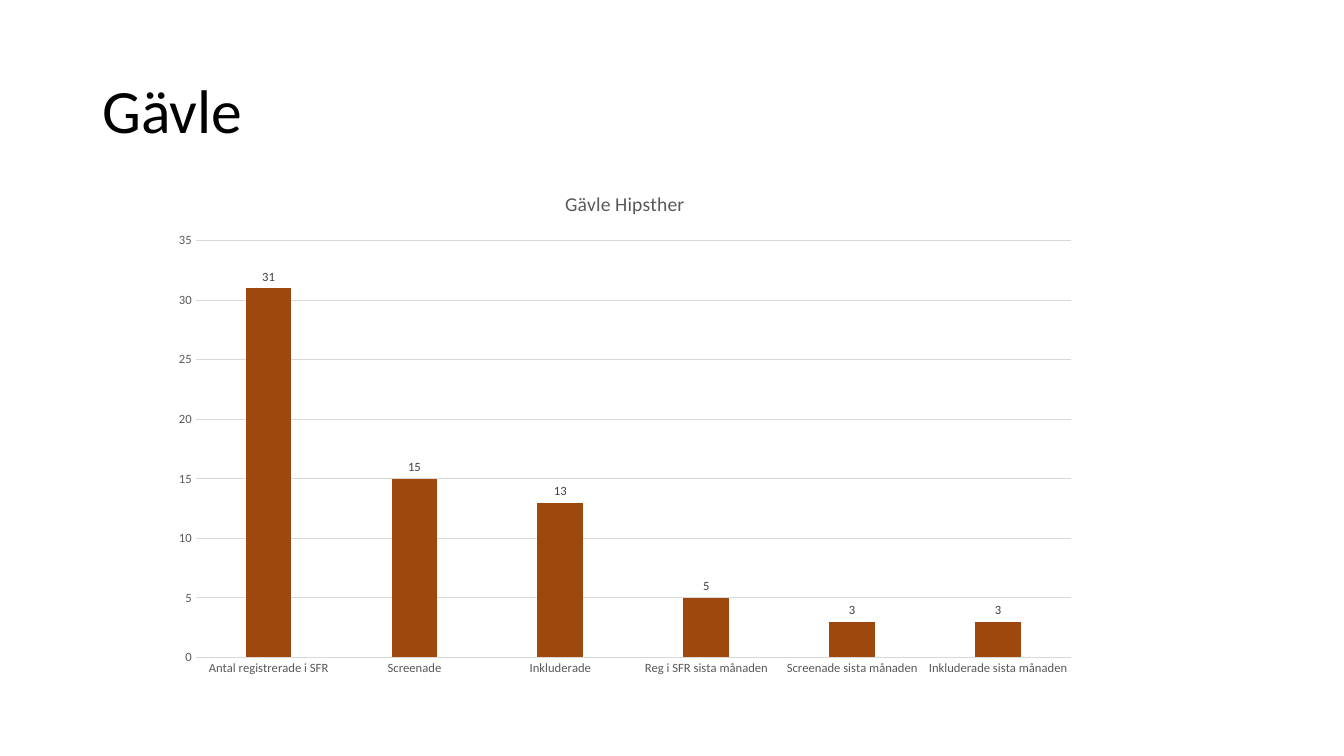
from dataclasses import dataclass

from pptx import Presentation
from pptx.chart.data import CategoryChartData
from pptx.dml.color import RGBColor
from pptx.enum.chart import XL_CHART_TYPE, XL_LABEL_POSITION, XL_TICK_MARK
from pptx.enum.text import MSO_ANCHOR
from pptx.util import Pt

FACE = "Calibri"
BLACK = RGBColor(0x00, 0x00, 0x00)
DARK = RGBColor(0x40, 0x40, 0x40)
GREY = RGBColor(0x59, 0x59, 0x59)
PALE = RGBColor(0xD9, 0xD9, 0xD9)
RUST = RGBColor(0x9E, 0x48, 0x0E)


@dataclass(frozen=True)
class Bar:
    label: str
    value: int


BARS = [
    Bar("Antal registrerade i SFR", 31),
    Bar("Screenade", 15),
    Bar("Inkluderade", 13),
    Bar("Reg i SFR sista månaden", 5),
    Bar("Screenade sista månaden", 3),
    Bar("Inkluderade sista månaden", 3),
]


def set_font(font, size: float, color: RGBColor) -> None:
    font.name = FACE
    font.size = Pt(size)
    font.bold = False
    font.color.rgb = color


def write(frame, text: str, *, size: float, color: RGBColor, space: float = 1.0) -> None:
    para = frame.paragraphs[0]
    para.line_spacing = space
    run = para.add_run()
    run.text = text
    set_font(run.font, size, color)


def set_line(line) -> None:
    line.color.rgb = PALE
    line.width = Pt(0.75)


def add_title(slide) -> None:
    box = slide.shapes.add_textbox(Pt(66), Pt(28.75), Pt(828), Pt(104.4))
    frame = box.text_frame
    frame.word_wrap = True
    frame.vertical_anchor = MSO_ANCHOR.MIDDLE
    write(frame, "Gävle", size=44, color=BLACK, space=0.9)


def add_bars(slide) -> None:
    data = CategoryChartData()
    data.categories = [bar.label for bar in BARS]
    data.add_series("Series 1", [bar.value for bar in BARS])
    chart = slide.shapes.add_chart(
        XL_CHART_TYPE.COLUMN_CLUSTERED, Pt(114.5), Pt(122.4), Pt(663.8), Pt(367.9), data
    ).chart
    set_font(chart.font, 10, BLACK)
    chart.has_legend = False
    chart.has_title = True
    write(chart.chart_title.text_frame, "Gävle Hipsther", size=14, color=GREY)
    chart.chart_title.include_in_layout = False

    # Axes
    for axis in (chart.category_axis, chart.value_axis):
        axis.major_tick_mark = XL_TICK_MARK.NONE
        axis.minor_tick_mark = XL_TICK_MARK.NONE
        set_font(axis.tick_labels.font, 9, GREY)
    set_line(chart.category_axis.format.line)
    chart.value_axis.format.line.fill.background()
    set_line(chart.value_axis.major_gridlines.format.line)

    # Columns and their labels
    plot = chart.plots[0]
    plot.vary_by_categories = False
    plot.gap_width = 219
    plot.overlap = -27
    series = plot.series[0]
    series.format.fill.solid()
    series.format.fill.fore_color.rgb = RUST
    labels = series.data_labels
    labels.show_value = True
    labels.position = XL_LABEL_POSITION.OUTSIDE_END
    set_font(labels.font, 9, DARK)


def main() -> None:
    deck = Presentation()
    deck.slide_width = Pt(960)
    deck.slide_height = Pt(540)
    slide = deck.slides.add_slide(deck.slide_layouts[6])
    add_title(slide)
    add_bars(slide)
    deck.save("out.pptx")


if __name__ == "__main__":
    main()
